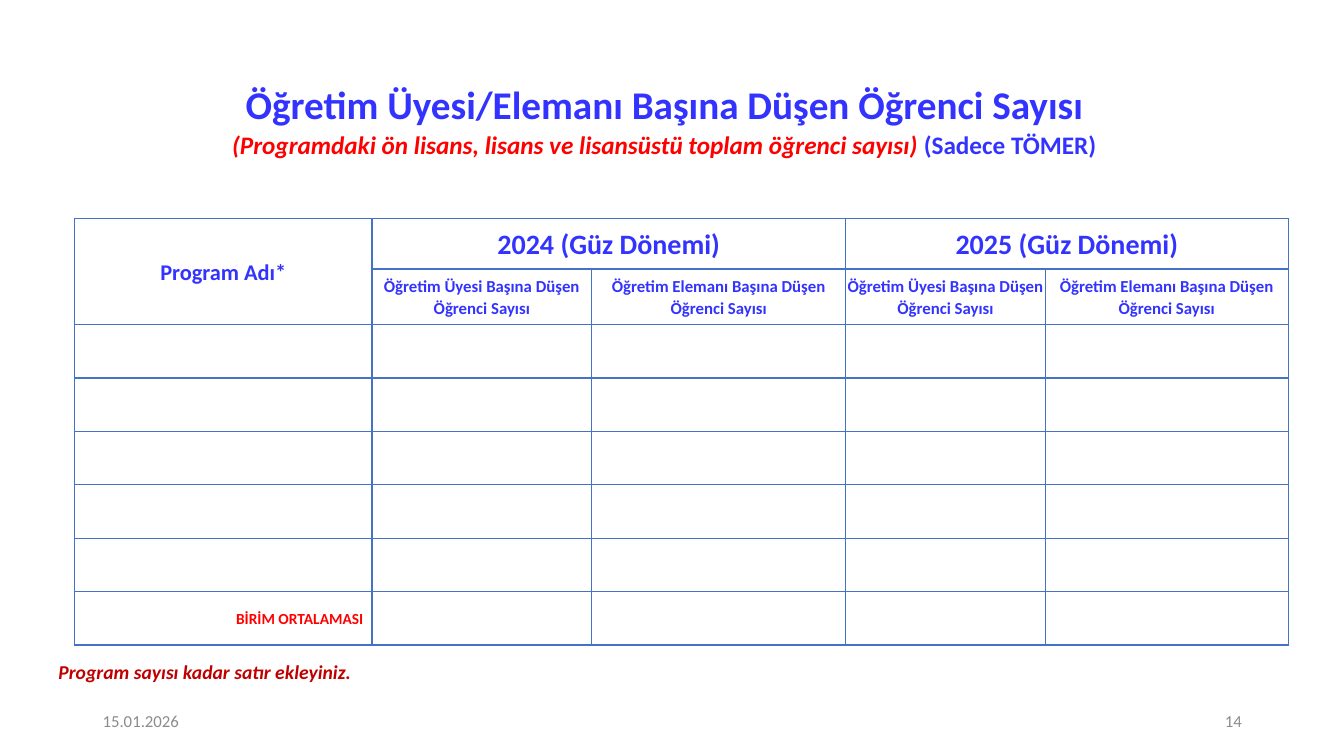
"""Build the slide on students per member of teaching staff."""
import pptx
import pptx.dml.color
import pptx.enum.text
import pptx.oxml
import pptx.oxml.ns
import pptx.util

Pt = pptx.util.Pt
RGBColor = pptx.dml.color.RGBColor
ALIGN = pptx.enum.text.PP_ALIGN
MIDDLE = pptx.enum.text.MSO_ANCHOR.MIDDLE
TOP = pptx.enum.text.MSO_ANCHOR.TOP

BLUE = RGBColor(0x33, 0x33, 0xFF)
RED = RGBColor(0xFF, 0x00, 0x00)
DARK_RED = RGBColor(0xC0, 0x00, 0x00)
GRAY = RGBColor(0x8C, 0x8C, 0x8C)
BORDER = RGBColor(0x44, 0x72, 0xC4)

COLUMN_WIDTHS = [212.4, 157, 181.4, 142.6, 173.5]
ROW_HEIGHTS = [36, 39.6] + [38.16] * 6
TERMS = ["2024 (Güz Dönemi)", "2025 (Güz Dönemi)"]
RATIOS = [
    "Öğretim Üyesi Başına Düşen Öğrenci Sayısı",
    "Öğretim Elemanı Başına Düşen Öğrenci Sayısı",
]


def add_run(paragraph, text, size, color, bold=True, italic=False):
    run = paragraph.add_run()
    run.text = text
    font = run.font
    font.name = "Calibri"
    font.size = Pt(size)
    font.bold = bold
    font.italic = italic
    font.color.rgb = color


def format_paragraph(paragraph, alignment):
    paragraph.alignment = alignment
    paragraph.line_spacing = 1.07
    paragraph.space_before = Pt(0)
    paragraph.space_after = Pt(8)


def fill_title(title):
    title.left, title.top = Pt(28.1), Pt(51.1)
    title.width, title.height = Pt(892.8), Pt(66.2)
    frame = title.text_frame
    frame.word_wrap = True
    frame.auto_size = pptx.enum.text.MSO_AUTO_SIZE.NONE
    frame.vertical_anchor = MIDDLE
    paragraph = frame.paragraphs[0]
    format_paragraph(paragraph, ALIGN.CENTER)
    add_run(paragraph, "Öğretim Üyesi/Elemanı Başına Düşen Öğrenci Sayısı", 28, BLUE)
    paragraph.add_line_break()
    add_run(
        paragraph,
        "(Programdaki ön lisans, lisans ve lisansüstü toplam öğrenci sayısı) ",
        18, RED, italic=True,
    )
    add_run(paragraph, "(Sadece TÖMER)", 18, BLUE)


def add_label(slide, box, text, size, color, alignment=ALIGN.LEFT, anchor=MIDDLE, strong=False):
    label = slide.shapes.add_textbox(*map(Pt, box))
    frame = label.text_frame
    frame.word_wrap = True
    frame.vertical_anchor = anchor
    paragraph = frame.paragraphs[0]
    paragraph.alignment = alignment
    add_run(paragraph, text, size, color, bold=strong, italic=strong)


def format_cell(cell):
    cell.fill.background()
    properties = cell._tc.get_or_add_tcPr()
    for index, side in enumerate(("lnL", "lnR", "lnT", "lnB")):
        line = pptx.oxml.parse_xml(
            f'<a:{side} {pptx.oxml.ns.nsdecls("a")} w="{Pt(1)}">'
            f'<a:solidFill><a:srgbClr val="{BORDER}"/></a:solidFill></a:{side}>'
        )
        properties.insert(index, line)


def fill_cell(cell, text, size, color=BLUE, alignment=ALIGN.CENTER, right=0):
    cell.vertical_anchor = MIDDLE
    cell.margin_left = cell.margin_top = cell.margin_bottom = 0
    cell.margin_right = Pt(right)
    paragraph = cell.text_frame.paragraphs[0]
    format_paragraph(paragraph, alignment)
    add_run(paragraph, text, size, color)


def add_ratio_table(slide):
    table = slide.shapes.add_table(
        len(ROW_HEIGHTS), len(COLUMN_WIDTHS), Pt(53.3), Pt(156.2),
        Pt(sum(COLUMN_WIDTHS)), Pt(sum(ROW_HEIGHTS)),
    ).table
    table.first_row = False
    table.horz_banding = False
    for column, width in zip(table.columns, COLUMN_WIDTHS):
        column.width = Pt(width)
    for row, height in zip(table.rows, ROW_HEIGHTS):
        row.height = Pt(height)
    for cell in table.iter_cells():
        format_cell(cell)

    table.cell(0, 0).merge(table.cell(1, 0))
    fill_cell(table.cell(0, 0), "Program Adı*", 16)
    for term_index, term in enumerate(TERMS):
        first = 1 + term_index * len(RATIOS)
        table.cell(0, first).merge(table.cell(0, first + 1))
        fill_cell(table.cell(0, first), term, 20)
        for offset, ratio in enumerate(RATIOS):
            fill_cell(table.cell(1, first + offset), ratio, 12)
    average = table.cell(len(ROW_HEIGHTS) - 1, 0)
    fill_cell(average, "BİRİM ORTALAMASI", 11, RED, ALIGN.RIGHT, right=6)


def main():
    presentation = pptx.Presentation()
    presentation.slide_width = Pt(960)
    presentation.slide_height = Pt(540)
    slide = presentation.slides.add_slide(presentation.slide_layouts[5])
    fill_title(slide.shapes.title)
    add_label(slide, (66.2, 500.4, 216, 28.8), "15.01.2026", 12, GRAY)
    add_label(slide, (678.2, 500.4, 216, 28.8), "14", 12, GRAY, ALIGN.RIGHT)
    add_label(
        slide, (34.6, 468, 610.6, 24.5), "Program sayısı kadar satır ekleyiniz.",
        14, DARK_RED, anchor=TOP, strong=True,
    )
    add_ratio_table(slide)
    presentation.save("out.pptx")


if __name__ == "__main__":
    main()
